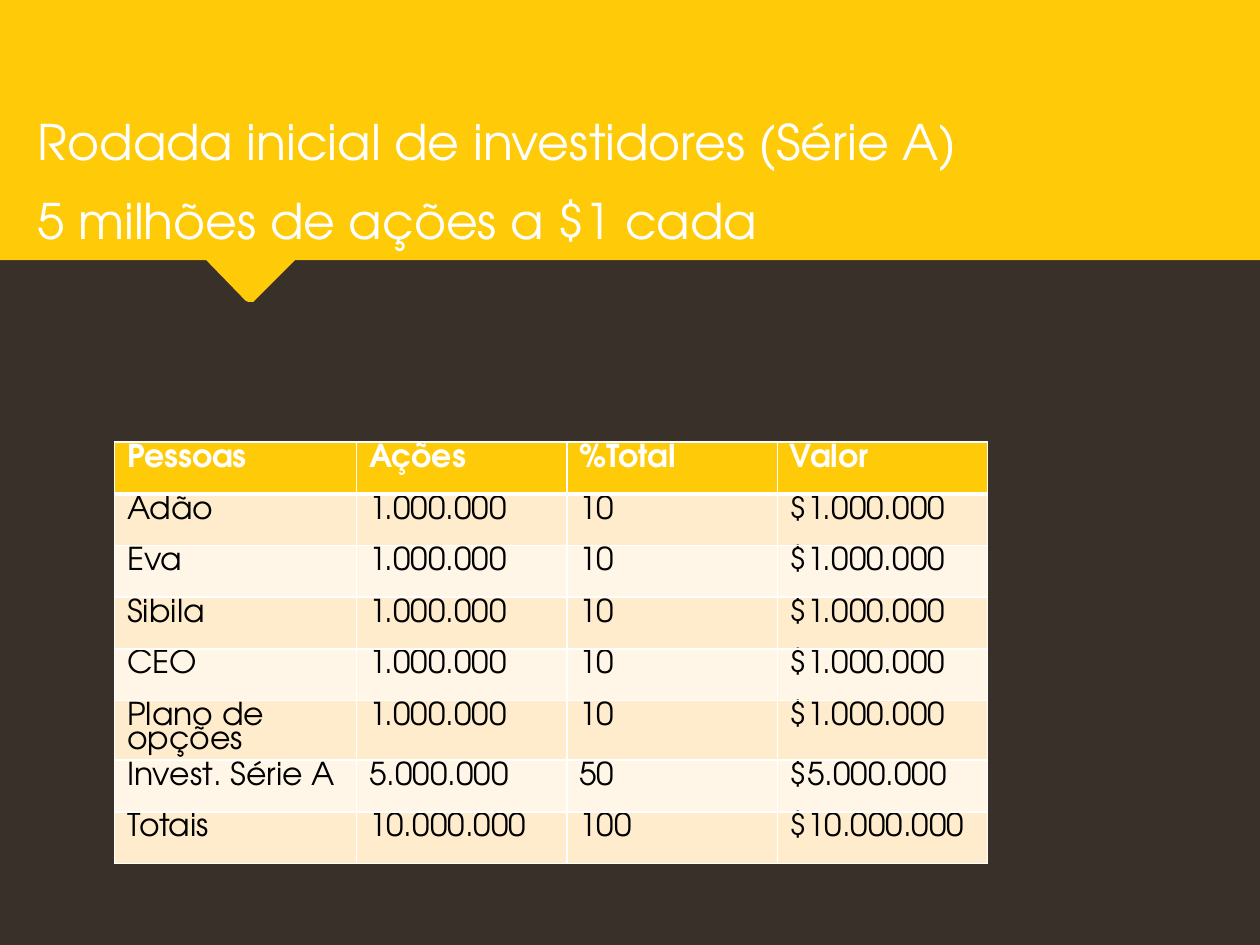
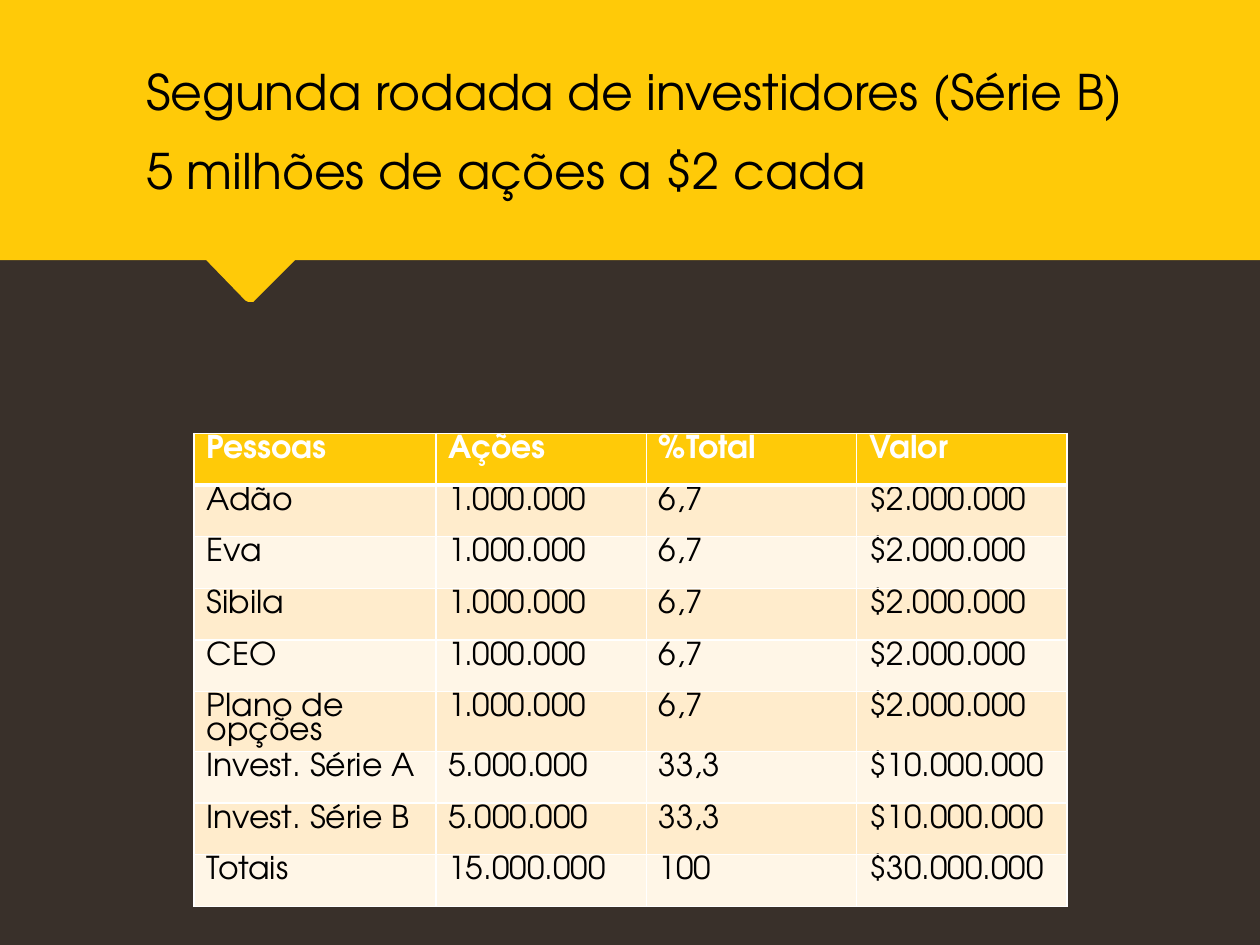
from lxml.etree import SubElement
from pptx import Presentation
from pptx.dml.color import RGBColor
from pptx.enum.text import MSO_ANCHOR as Anchor, MSO_AUTO_SIZE as AutoSize, PP_ALIGN as Align
from pptx.oxml import parse_xml
from pptx.oxml.ns import nsdecls, qn
from pptx.util import Inches, Pt

FONT = "TeX Gyre Adventor"
YELLOW = RGBColor(0xFF, 0xCA, 0x08)
BROWN = RGBColor(0x39, 0x30, 0x2A)
WHITE = RGBColor(0xFF, 0xFF, 0xFF)
BLACK = RGBColor(0, 0, 0)
BANDS = (RGBColor(0xFF, 0xF6, 0xE7), RGBColor(0xFF, 0xEC, 0xCC))

BAND_POINTS = [(10, 0), (0, 0), (0, 2.06), (1.64, 2.06), (1.95, 2.38), (1.97, 2.39),
               (2.01, 2.39), (2.02, 2.38), (2.34, 2.06), (10, 2.06)]
COLUMNS = (1.92, 1.67, 1.67, 1.67)
ROW_HEIGHT = 0.41
HEADER = ("Pessoas", "Ações", "%Total", "Valor")
FOUNDERS = ("Adão", "Eva", "Sibila", "CEO", "Plano de opções")

SERIES_A = [(name, "1.000.000", "10", "$1.000.000") for name in FOUNDERS] + [
    ("Invest. Série A", "5.000.000", "50", "$5.000.000"),
    ("Totais", "10.000.000", "100", "$10.000.000"),
]
SERIES_B = [(name, "1.000.000", "6,7", "$2.000.000") for name in FOUNDERS] + [
    ("Invest. Série A", "5.000.000", "33,3", "$10.000.000"),
    ("Invest. Série B", "5.000.000", "33,3", "$10.000.000"),
    ("Totais", "15.000.000", "100", "$30.000.000"),
]


def write(p, text, size=18, color=BLACK, bold=False, spacing=None, before=0, after=0):
    p.alignment = Align.LEFT
    p.line_spacing = spacing
    p.space_before, p.space_after = Pt(before), Pt(after)
    r = p.add_run()
    r.text = text
    r.font.name, r.font.size, r.font.bold = FONT, Pt(size), bold
    r.font.color.rgb = color
    return r


def add_text_shadow(r):
    effects = parse_xml(
        f'<a:effectLst {nsdecls("a")}><a:outerShdw blurRad="38100" dist="38100" dir="2700000">'
        '<a:srgbClr val="000000"><a:alpha val="43000"/></a:srgbClr></a:outerShdw></a:effectLst>')
    r.font.fill._xPr.find(qn("a:solidFill")).addnext(effects)


def add_band(s):
    points = [(Inches(x), Inches(y)) for x, y in BAND_POINTS]
    builder = s.shapes.build_freeform(*points[0])
    builder.add_line_segments(points[1:], close=True)
    band = builder.convert_to_shape()
    band.shadow.inherit = False
    band.fill.solid()
    band.fill.fore_color.rgb = YELLOW
    band.line.color.rgb = YELLOW
    band.line.width = Pt(0.75)
    s.shapes._spTree.insert(2, band._element)


def add_title(s, lines, box, color):
    sp = s.shapes.title
    sp.left, sp.top, sp.width, sp.height = map(Inches, box)
    tf = sp.text_frame
    tf.word_wrap = True
    tf.auto_size = AutoSize.NONE
    tf.vertical_anchor = Anchor.MIDDLE
    for i, line in enumerate(lines):
        p = tf.add_paragraph() if i else tf.paragraphs[0]
        add_text_shadow(write(p, line, size=28, color=color, before=5.6 if i else 0, after=6))


def set_borders(cell, top=1, bottom=1):
    tc_pr = cell._tc.get_or_add_tcPr()
    for i, (side, width) in enumerate((("L", 1), ("R", 1), ("T", top), ("B", bottom))):
        ln = SubElement(tc_pr, qn(f"a:ln{side}"), w=str(Pt(width)))
        fill = SubElement(ln, qn("a:solidFill"))
        SubElement(fill, qn("a:srgbClr"), val=str(WHITE))
        tc_pr.insert(i, ln)


def add_shares_table(s, left, top, body):
    rows = [HEADER, *body]
    frame = s.shapes.add_table(len(rows), len(COLUMNS), Inches(left), Inches(top),
                               Inches(sum(COLUMNS)), Inches(ROW_HEIGHT * len(rows)))
    table = frame.table
    for column, width in zip(table.columns, COLUMNS):
        column.width = Inches(width)
    for i, values in enumerate(rows):
        table.rows[i].height = Inches(ROW_HEIGHT)
        head = i == 0
        for j, value in enumerate(values):
            cell = table.cell(i, j)
            cell.fill.solid()
            cell.fill.fore_color.rgb = YELLOW if head else BANDS[i % 2]
            set_borders(cell, top=3 if i == 1 else 1, bottom=3 if head else 1)
            write(cell.text_frame.paragraphs[0], value, bold=head,
                  color=WHITE if head else BLACK, spacing=0.8)


def add_round(prs, lines, title_box, title_color, table_at, body):
    s = prs.slides.add_slide(prs.slide_layouts[5])
    s.background.fill.solid()
    s.background.fill.fore_color.rgb = BROWN
    add_band(s)
    add_title(s, lines, title_box, title_color)
    add_shares_table(s, *table_at, body)


def main():
    prs = Presentation()
    prs.slide_width, prs.slide_height = Inches(10), Inches(7.5)
    add_round(prs, ("Rodada inicial de investidores (Série A)", "5 milhões de ações a $1 cada"),
              (0.2, 0, 9.29, 2.87), WHITE, (0.91, 3.51), SERIES_A)
    add_round(prs, ("Segunda rodada de investidores (Série B)", "5 milhões de ações a $2 cada"),
              (1.06, 0.13, 8.23, 1.81), BLACK, (1.54, 3.44), SERIES_B)
    prs.save("out.pptx")


if __name__ == "__main__":
    main()
